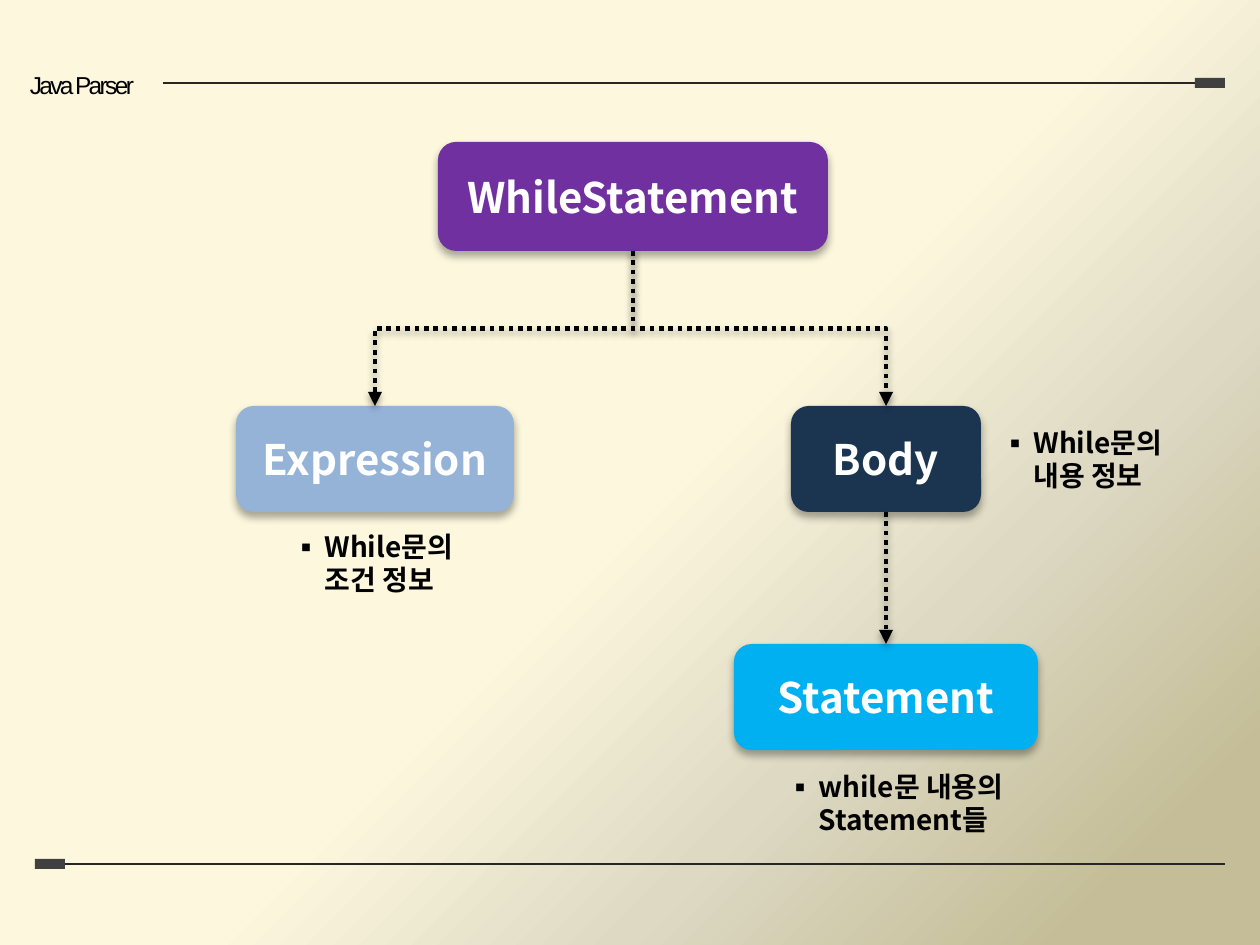
from dataclasses import dataclass
from copy import deepcopy

from lxml.etree import SubElement
from pptx import Presentation
from pptx.dml.color import RGBColor
from pptx.enum.dml import MSO_LINE
from pptx.enum.shapes import MSO_CONNECTOR, MSO_SHAPE
from pptx.enum.text import MSO_ANCHOR, MSO_AUTO_SIZE, PP_ALIGN
from pptx.oxml import parse_xml
from pptx.oxml.ns import nsdecls, qn
from pptx.shapes.autoshape import Shape
from pptx.shapes.connector import Connector
from pptx.slide import Slide
from pptx.util import Emu, Pt

PX = 914400 / 168
KOREAN_FONT = "Noto Sans CJK KR"
NODE_FONT = {"size": Pt(18), "bold": True, "name": KOREAN_FONT}
NOTE_FONT = {"size": Pt(12), "bold": True, "name": KOREAN_FONT}
TITLE_FONT = {"size": Pt(10.5), "name": "Arial"}
NOTE_FRAME = {"word_wrap": False, "auto_size": MSO_AUTO_SIZE.SHAPE_TO_FIT_TEXT}
NODE_FRAME = {"word_wrap": True, "vertical_anchor": MSO_ANCHOR.MIDDLE}
BRANCH_LINE = {"width": Pt(2), "dash_style": MSO_LINE.ROUND_DOT}
BACKGROUND_STOPS = {52: "FCF7DD", 71: "DDD9C3", 91: "C4BD97"}
NOTE_INDENT = 32


@dataclass(frozen=True)
class Node:
    """A syntax tree node."""

    label: str
    left: int
    top: int
    width: int
    height: int
    fill: str


@dataclass(frozen=True)
class Note:
    """A bulleted remark beside a node."""

    text: str
    left: int
    top: int
    width: int


@dataclass(frozen=True)
class Shadow:
    """A shadow cast straight down."""

    alpha: int
    blur: float
    distance: float


NODES = [
    Node("Statement", 734, 644, 304, 106, "00B0F0"),
    Node("WhileStatement", 438, 142, 390, 109, "7030A0"),
    Node("Expression", 236, 406, 278, 106, "95B3D7"),
    Node("Body", 791, 406, 190, 106, "1B3551"),
]
NOTES = [
    Note("While문의\v조건 정보", 276, 521, 198),
    Note("While문의\v내용 정보", 985, 417, 198),
    Note("while문 내용의\vStatement들", 770, 761, 259),
]
NODE_SHADOW = Shadow(32, 3.5, 2.2)
BRANCH_SHADOW = Shadow(38, 3.1, 1.6)


def px(length: float) -> Emu:
    """Turn pixels into EMU."""
    return Emu(round(length * PX))


def color(value: str) -> RGBColor:
    """Turn a hex string into a colour."""
    return RGBColor.from_string(value)


def apply(target: object, values: dict) -> None:
    """Set every format value on the target."""
    for name, value in values.items():
        setattr(target, name, value)


def cast_shadow(effects, shadow: Shadow) -> None:
    """Fill an effect list with a shadow."""
    effects.append(parse_xml(
        f'<a:outerShdw {nsdecls("a")} blurRad="{Pt(shadow.blur)}" dist="{Pt(shadow.distance)}" '
        f'dir="5400000" rotWithShape="0"><a:srgbClr val="000000">'
        f'<a:alpha val="{shadow.alpha * 1000}"/></a:srgbClr></a:outerShdw>'))


def write(shape: Shape, text: str, frame: dict, font: dict, ink: str, align: PP_ALIGN) -> None:
    """Write one formatted paragraph into a shape."""
    apply(shape.text_frame, frame)
    paragraph = shape.text_frame.paragraphs[0]
    paragraph.text = text
    paragraph.alignment = align
    for run in paragraph.runs:
        apply(run.font, font)
        run.font.color.rgb = color(ink)
        SubElement(run.font._element, qn("a:ea")).set("typeface", font["name"])
    for line_break in paragraph._p.findall(qn("a:br")):
        line_break.append(deepcopy(paragraph.runs[0].font._element))


def paint_background(slide: Slide) -> None:
    """Paint the gradient spreading from the top left corner."""
    slide.background.fill.solid()
    plain = slide._element.find(".//" + qn("p:bgPr")).find(qn("a:solidFill"))
    stops = "".join(f'<a:gs pos="{position * 1000}"><a:srgbClr val="{value}"/></a:gs>'
                    for position, value in BACKGROUND_STOPS.items())
    plain.getparent().replace(plain, parse_xml(
        f'<a:gradFill {nsdecls("a")} rotWithShape="1"><a:gsLst>{stops}</a:gsLst>'
        f'<a:path path="circle"><a:fillToRect r="100000" b="100000"/></a:path></a:gradFill>'))


def add_block(slide: Slide, kind: MSO_SHAPE, left: int, top: int, width: int, height: int,
              fill: str) -> Shape:
    """Add a filled shape without outline."""
    block = slide.shapes.add_shape(kind, px(left), px(top), px(width), px(height))
    block.shadow.inherit = False
    block.fill.solid()
    block.fill.fore_color.rgb = color(fill)
    block.line.fill.background()
    return block


def add_node(slide: Slide, node: Node) -> Shape:
    """Add a tree node with its label."""
    box = add_block(slide, MSO_SHAPE.ROUNDED_RECTANGLE, node.left, node.top,
                    node.width, node.height, node.fill)
    cast_shadow(box._element.spPr.find(qn("a:effectLst")), NODE_SHADOW)
    write(box, node.label, NODE_FRAME, NODE_FONT, "FFFFFF", PP_ALIGN.CENTER)
    return box


def add_note(slide: Slide, note: Note) -> None:
    """Add a bulleted remark."""
    remark = slide.shapes.add_textbox(px(note.left), px(note.top), px(note.width), px(84))
    write(remark, note.text, NOTE_FRAME, NOTE_FONT, "000000", PP_ALIGN.LEFT)
    properties = remark.text_frame.paragraphs[0]._p.get_or_add_pPr()
    properties.set("marL", str(px(NOTE_INDENT)))
    properties.set("indent", str(-px(NOTE_INDENT)))
    SubElement(properties, qn("a:buFont")).set("typeface", KOREAN_FONT)
    SubElement(properties, qn("a:buChar")).set("char", "▪")


def add_line(slide: Slide, kind: MSO_CONNECTOR, start: tuple[int, int], end: tuple[int, int],
             ink: str, line_format: dict) -> Connector:
    """Add a connector and its empty effect list."""
    line = slide.shapes.add_connector(kind, *map(px, start + end))
    line.line.color.rgb = color(ink)
    apply(line.line, line_format)
    SubElement(line._element.spPr, qn("a:effectLst"))
    return line


def add_branch(slide: Slide, parent: Shape, child: Shape) -> None:
    """Add a dotted arrow from a parent node down to its child."""
    run = child.left + child.width // 2 - parent.left - parent.width // 2
    straight = abs(run) < px(1)
    kind = MSO_CONNECTOR.STRAIGHT if straight else MSO_CONNECTOR.ELBOW
    branch = add_line(slide, kind, (0, 0), (0, 0), "000000", BRANCH_LINE)
    SubElement(branch.line._get_or_add_ln(), qn("a:tailEnd")).set("type", "triangle")
    cast_shadow(branch._element.spPr.find(qn("a:effectLst")), BRANCH_SHADOW)
    branch.begin_connect(parent, 2)
    branch.end_connect(child, 0)
    if not straight:
        middle_x = (branch.begin_x + branch.end_x) // 2
        middle_y = (branch.begin_y + branch.end_y) // 2
        drop, reach = branch.height, branch.width
        apply(branch, {"left": middle_x - drop // 2, "top": middle_y - reach // 2,
                       "width": drop, "height": reach})
        turn = branch._element.spPr.find(qn("a:xfrm"))
        turn.set("rot", "16200000" if run > 0 else "5400000")
        turn.set("flipH", "1" if run > 0 else "0")


def add_frame(slide: Slide) -> None:
    """Add the title and the rules above and below the tree."""
    footer_rule, header_rule = (
        add_line(slide, MSO_CONNECTOR.STRAIGHT, (left, y), (1225, y), "262626", {"width": Pt(0.75)})
        for left, y in ((35, 864), (163, 83)))
    footer_tab, header_tab = (
        add_block(slide, MSO_SHAPE.RECTANGLE, left, top, 30, 10, "404040")
        for left, top in ((35, 859), (1195, 78)))
    footer_rule.begin_connect(footer_tab, 1)
    header_rule.end_connect(header_tab, 3)
    title = slide.shapes.add_textbox(px(10), px(62), px(144), px(47))
    write(title, "Java Parser", NOTE_FRAME, TITLE_FONT, "000000", PP_ALIGN.CENTER)
    title.text_frame.paragraphs[0].runs[0].font._element.set("spc", "-110")


def main() -> None:
    """Build the slide and save it."""
    deck = Presentation()
    apply(deck, {"slide_width": px(1260), "slide_height": px(945)})
    slide = deck.slides.add_slide(deck.slide_layouts[6])
    paint_background(slide)
    add_frame(slide)
    statement, root, expression, body = [add_node(slide, node) for node in NODES]
    for parent, child in ((root, expression), (body, statement), (root, body)):
        add_branch(slide, parent, child)
    for note in NOTES:
        add_note(slide, note)
    deck.save("out.pptx")


if __name__ == "__main__":
    main()
